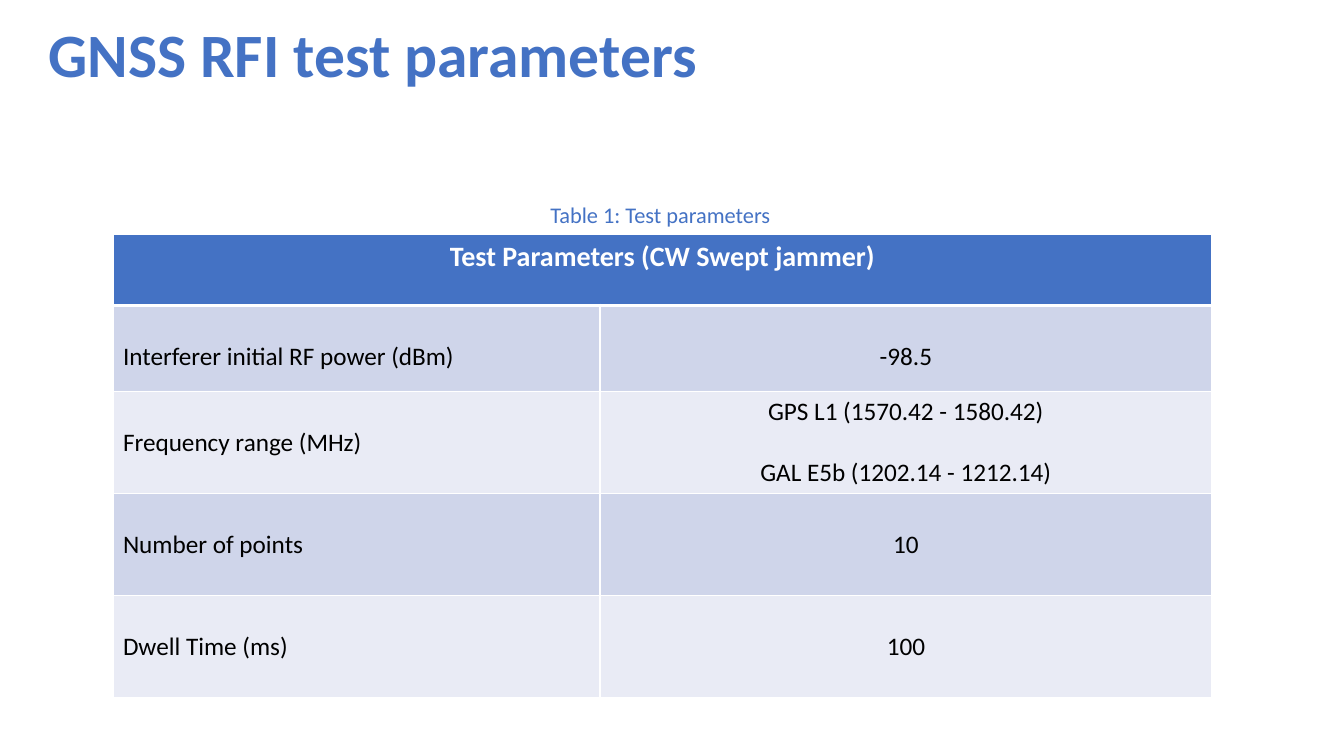
from lxml import etree
from pptx import Presentation
from pptx.dml.color import RGBColor
from pptx.enum.text import MSO_ANCHOR, MSO_AUTO_SIZE, PP_ALIGN
from pptx.oxml.ns import qn
from pptx.util import Inches, Pt

TITLE = "GNSS RFI test parameters"
CAPTION = "Table 1: Test parameters"
HEADER = "Test Parameters (CW Swept jammer)"
PARAMETERS = [
    ("Interferer initial RF power (dBm)", ["-98.5"]),
    ("Frequency range (MHz)",
     ["GPS L1 (1570.42 - 1580.42)", "GAL E5b (1202.14 - 1212.14)"]),
    ("Number of points", ["10"]),
    ("Dwell Time (ms)", ["100"]),
]
COL_WIDTHS = [4.83, 6.07]
ROW_HEIGHTS = [0.7, 0.85, 1.01, 1.01, 1.01]

BLUE = RGBColor(0x44, 0x72, 0xC4)
WHITE = RGBColor(0xFF, 0xFF, 0xFF)
BLACK = RGBColor(0, 0, 0)
BANDS = [RGBColor(0xCF, 0xD5, 0xEA), RGBColor(0xE9, 0xEB, 0xF5)]


def write(tf, lines, size, color, bold=False, align=PP_ALIGN.LEFT, gap=0, spacing=None):
    for i, line in enumerate(lines):
        p = tf.paragraphs[0] if i == 0 else tf.add_paragraph()
        p.alignment = align
        if i:
            p.space_before = Pt(gap)
        if spacing:
            p.line_spacing = spacing
        r = p.add_run()
        r.text = line
        r.font.name, r.font.size, r.font.bold = "Calibri", Pt(size), bold
        r.font.color.rgb = color


def set_borders(cell, top=1, bottom=1):
    """Give the cell white edges; widths are in points."""
    tc_pr = cell._tc.get_or_add_tcPr()
    edges = [("a:lnL", 1), ("a:lnR", 1), ("a:lnT", top), ("a:lnB", bottom)]
    for i, (tag, width) in enumerate(edges):
        ln = etree.Element(qn(tag), w=str(Pt(width)))
        fill = etree.SubElement(ln, qn("a:solidFill"))
        etree.SubElement(fill, qn("a:srgbClr"), val=str(WHITE))
        tc_pr.insert(i, ln)


def fill_cell(cell, color, top=1, bottom=1):
    cell.fill.solid()
    cell.fill.fore_color.rgb = color
    set_borders(cell, top, bottom)


def add_parameter_table(slide):
    table = slide.shapes.add_table(
        len(ROW_HEIGHTS), len(COL_WIDTHS), Inches(1.12), Inches(2.33),
        Inches(sum(COL_WIDTHS)), Inches(sum(ROW_HEIGHTS))).table
    for col, width in zip(table.columns, COL_WIDTHS):
        col.width = Inches(width)
    for row, height in zip(table.rows, ROW_HEIGHTS):
        row.height = Inches(height)

    for cell in table.rows[0].cells:
        fill_cell(cell, BLUE, bottom=3)
    table.cell(0, 0).merge(table.cell(0, 1))
    write(table.cell(0, 0).text_frame, [HEADER], 20, WHITE, bold=True,
          align=PP_ALIGN.CENTER)

    for i, (name, values) in enumerate(PARAMETERS):
        columns = [([name], PP_ALIGN.LEFT), (values, PP_ALIGN.CENTER)]
        for j, (lines, align) in enumerate(columns):
            cell = table.cell(i + 1, j)
            fill_cell(cell, BANDS[i % 2], top=1 if i else 3)
            cell.margin_top = Inches(0.36 if len(lines) == 1 else 0.05)
            write(cell.text_frame, lines, 18, BLACK, align=align, gap=22)


def main():
    prs = Presentation()
    prs.slide_width, prs.slide_height = Inches(13.33), Inches(7.5)
    slide = prs.slides.add_slide(prs.slide_layouts[5])

    title = slide.shapes.title
    title.left, title.top = Inches(0.38), Inches(0.16)
    title.width, title.height = Inches(9.48), Inches(0.79)
    tf = title.text_frame
    tf.auto_size = MSO_AUTO_SIZE.NONE
    tf.vertical_anchor = MSO_ANCHOR.BOTTOM
    write(tf, [TITLE], 44, BLUE, bold=True, spacing=0.9)

    add_parameter_table(slide)

    caption = slide.shapes.add_textbox(
        Inches(5.36), Inches(1.95), Inches(2.41), Inches(0.37))
    caption.text_frame.word_wrap = False
    write(caption.text_frame, [CAPTION], 16, BLUE)

    prs.save("out.pptx")


if __name__ == "__main__":
    main()
